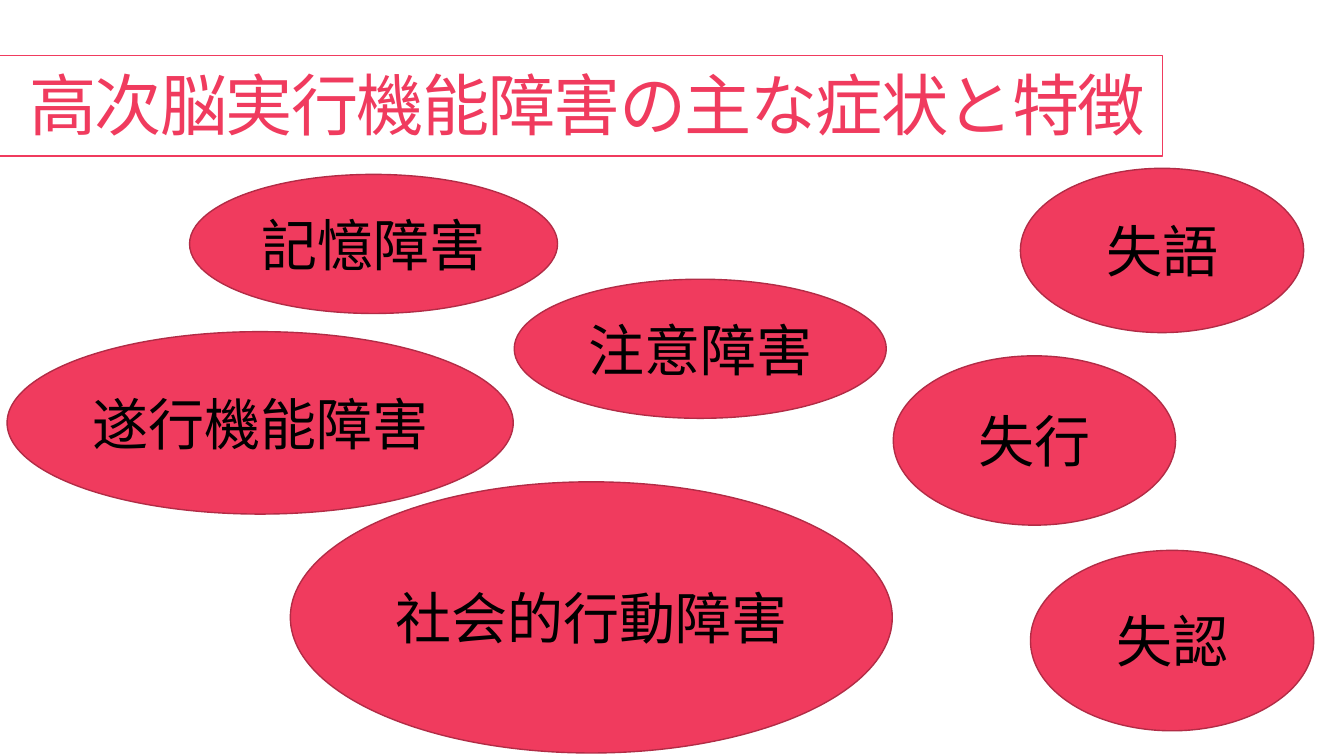
from lxml import etree
from pptx import Presentation
from pptx.dml.color import RGBColor
from pptx.enum.shapes import MSO_SHAPE
from pptx.enum.text import MSO_ANCHOR, MSO_AUTO_SIZE, PP_ALIGN
from pptx.oxml.ns import qn
from pptx.util import Inches, Pt

RECTANGLE, OVAL = MSO_SHAPE.RECTANGLE, MSO_SHAPE.OVAL
MIDDLE = MSO_ANCHOR.MIDDLE
LEFT, CENTER = PP_ALIGN.LEFT, PP_ALIGN.CENTER
NO_AUTOFIT = MSO_AUTO_SIZE.NONE

PINK = RGBColor(0xF0, 0x3B, 0x5E)
DARK_PINK = RGBColor(0xB2, 0x2C, 0x46)
WHITE = RGBColor(0xFF, 0xFF, 0xFF)
BLACK = RGBColor(0, 0, 0)
TITLE_FONT = "Calibri"
SYMPTOM_FONT = "Noto Sans CJK JP"

TITLE = "高次脳実行機能障害の主な症状と特徴"
TITLE_AREA = (0.19, 0.19, 11.33, 1.81)
TITLE_FRAME = (-0.21, 0.55, 11.74, 1)

# text, (left, top, width, height) in inches
SYMPTOMS = [
    ("記憶障害", (1.88, 1.73, 3.65, 1.38)),
    ("失認", (10.22, 5.46, 2.81, 1.79)),
    ("失語", (10.12, 1.67, 2.81, 1.63)),
    ("社会的行動障害", (2.88, 4.78, 5.97, 2.69)),
    ("失行", (8.86, 3.53, 2.8, 1.68)),
    ("注意障害", (5.1, 2.77, 3.69, 1.38)),
    ("遂行機能障害", (0.07, 3.29, 5.02, 1.81)),
]


def add_outlined(slide, kind, area, fill, line):
    shape = slide.shapes.add_shape(kind, *map(Inches, area))
    shape.shadow.inherit = False
    shape.fill.solid()
    shape.fill.fore_color.rgb = fill
    shape.line.color.rgb = line
    shape.line.width = Pt(1)
    return shape


def write(shape, text, font_name, size, color, align):
    """Put one line of text, vertically centred, into a shape."""
    frame = shape.text_frame
    frame.text = text
    frame.vertical_anchor = MIDDLE
    para = frame.paragraphs[0]
    para.alignment = align
    span = para.runs[0]
    span.font.name = font_name
    span.font.size = Pt(size)
    span.font.color.rgb = color
    return para


def add_title(slide):
    title = slide.shapes.title
    title.left, title.top, title.width, title.height = map(Inches, TITLE_AREA)
    para = write(title, TITLE, TITLE_FONT, 48, PINK, LEFT)
    para.line_spacing = 0.85
    para.runs[0].font._element.set("spc", "-120")
    title.text_frame.auto_size = NO_AUTOFIT
    frame = add_outlined(slide, RECTANGLE, TITLE_FRAME, WHITE, PINK)
    title._element.addprevious(frame._element)  # frame goes behind the title


def add_symptom(slide, text, area):
    oval = add_outlined(slide, OVAL, area, PINK, DARK_PINK)
    para = write(oval, text, SYMPTOM_FONT, 40, BLACK, CENTER)
    oval.text_frame.word_wrap = False
    east_asian = etree.SubElement(para.runs[0].font._element, qn("a:ea"))
    east_asian.set("typeface", SYMPTOM_FONT)


def main():
    deck = Presentation()
    deck.slide_width, deck.slide_height = Inches(13.33), Inches(7.5)
    slide = deck.slides.add_slide(deck.slide_layouts[5])
    add_title(slide)
    for text, area in SYMPTOMS:
        add_symptom(slide, text, area)
    deck.save("out.pptx")


if __name__ == "__main__":
    main()
